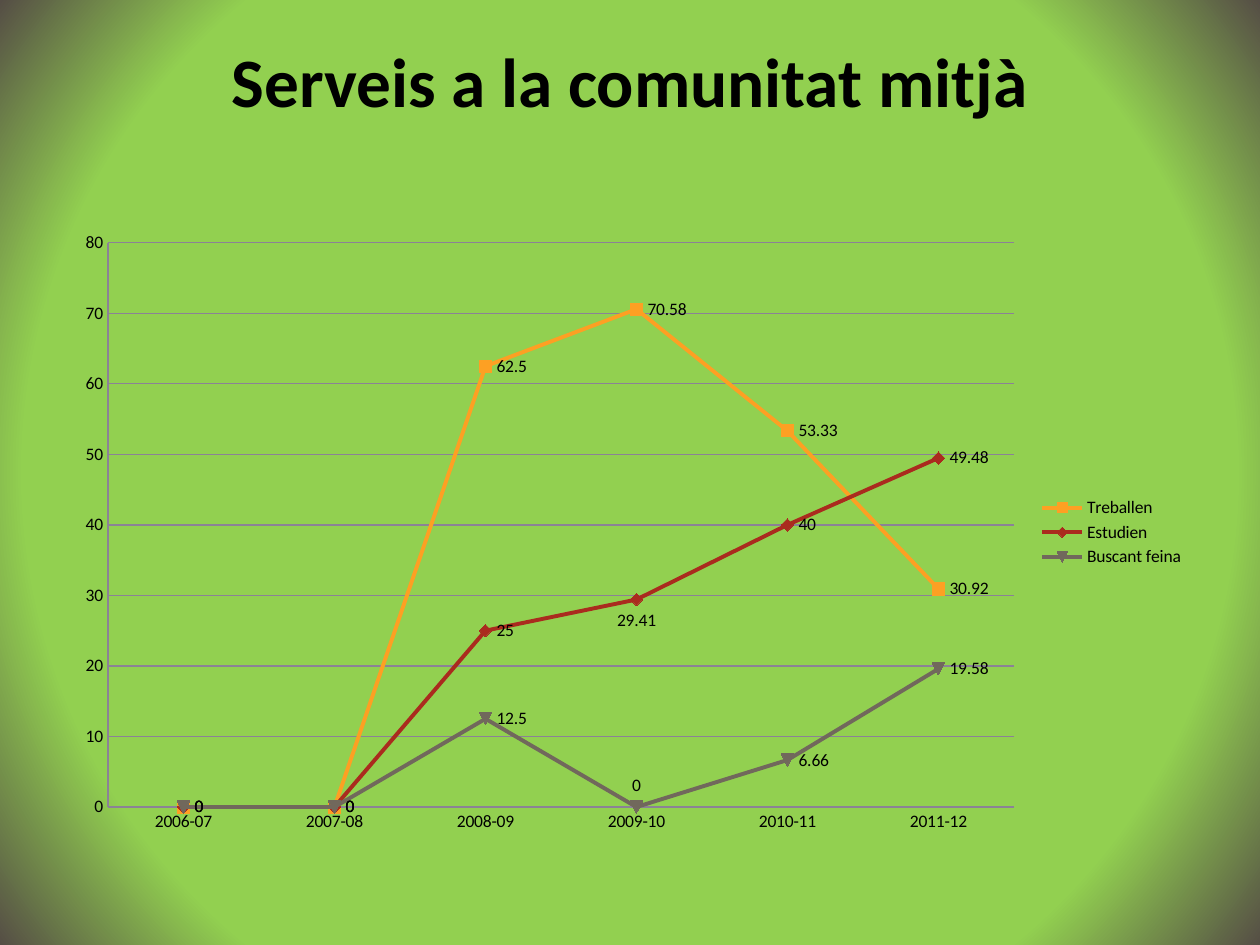
import pptx
import pptx.util
import pptx.chart.data
import pptx.dml.color
import pptx.enum.chart
import pptx.enum.text
import pptx.oxml
import pptx.oxml.ns

Pt = pptx.util.Pt
enum = pptx.enum.chart
qn = pptx.oxml.ns.qn
hues = {"green": "92D050", "edge": "554E45", "text": "000000", "grid": "8B8296",
        "work": "FDA023", "study": "AA2B1E", "seek": "71685C"}


def rgb(name):
    return pptx.dml.color.RGBColor.from_string(hues[name])


def style(item, **vals):
    for key, val in vals.items():
        setattr(item, key, val)


deck = pptx.Presentation()
style(deck, slide_width=Pt(720), slide_height=Pt(540))
slide = deck.slides.add_slide(deck.slide_layouts[6])

fill = slide.background.fill
fill.gradient()
for stop, (place, name) in zip(fill.gradient_stops, [(0.77, "green"), (1, "edge")]):
    stop.position = place
    stop.color.rgb = rgb(name)
grad = slide.element.find(".//" + qn("a:gradFill"))
grad.replace(grad.find(qn("a:lin")), pptx.oxml.parse_xml(
    f'<a:path {pptx.oxml.ns.nsdecls("a")} path="circle">'
    '<a:fillToRect l="50000" t="50000" r="50000" b="50000"/></a:path>'))

frame = slide.shapes.add_textbox(Pt(36), Pt(21.6), Pt(648), Pt(90)).text_frame
style(frame, word_wrap=True, margin_top=0,
      vertical_anchor=pptx.enum.text.MSO_ANCHOR.TOP)
title = frame.paragraphs[0]
title.alignment = pptx.enum.text.PP_ALIGN.CENTER
run = title.add_run()
run.text = "Serveis a la comunitat mitjà"
style(run.font, name="Calibri", size=Pt(39.6), bold=True)
run.font.color.rgb = rgb("text")

rows = [
    ("Treballen", "work", [None, None, 62.5, 70.58, 53.33, 30.92], None),
    ("Estudien ", "study", [None, None, 25, 29.41, 40, 49.48], "BELOW"),
    ("Buscant feina", "seek", [None, None, 12.5, 0, 6.66, 19.58], "ABOVE"),
]
data = pptx.chart.data.CategoryChartData()
data.categories = ["2006-07", "2007-08", "2008-09", "2009-10", "2010-11", "2011-12"]
for name, hue, vals, side in rows:
    data.add_series(name, vals)
chart = slide.shapes.add_chart(enum.XL_CHART_TYPE.LINE_MARKERS, Pt(36), Pt(126),
                               Pt(648), Pt(356.4), data).chart
style(chart, has_title=False, has_legend=True)
style(chart.font, name="Calibri", size=Pt(10))
chart.font.color.rgb = rgb("text")
style(chart.legend, position=enum.XL_LEGEND_POSITION.RIGHT, include_in_layout=False)
chart.element.find(".//" + qn("c:dispBlanksAs")).set("val", "zero")

axis = chart.value_axis
style(axis, minimum_scale=0, maximum_scale=80, major_unit=10, has_major_gridlines=True)
for part in (axis, chart.category_axis):
    part.major_tick_mark = enum.XL_TICK_MARK.NONE
for part in (axis, chart.category_axis, axis.major_gridlines):
    part.format.line.width = Pt(0.75)
    part.format.line.color.rgb = rgb("grid")

chart.plots[0].vary_by_categories = False
for line, (name, hue, vals, side) in zip(chart.plots[0].series, rows):
    line.smooth = False
    line.format.line.width = Pt(2.25)
    line.format.line.color.rgb = rgb(hue)
    line.marker.size = 7
    line.marker.format.fill.solid()
    line.marker.format.fill.fore_color.rgb = rgb(hue)
    line.marker.format.line.color.rgb = rgb(hue)
    style(line.data_labels, show_value=True, position=enum.XL_LABEL_POSITION.RIGHT)
    if side:
        line.points[3].data_label.position = enum.XL_LABEL_POSITION[side]

deck.save("out.pptx")
